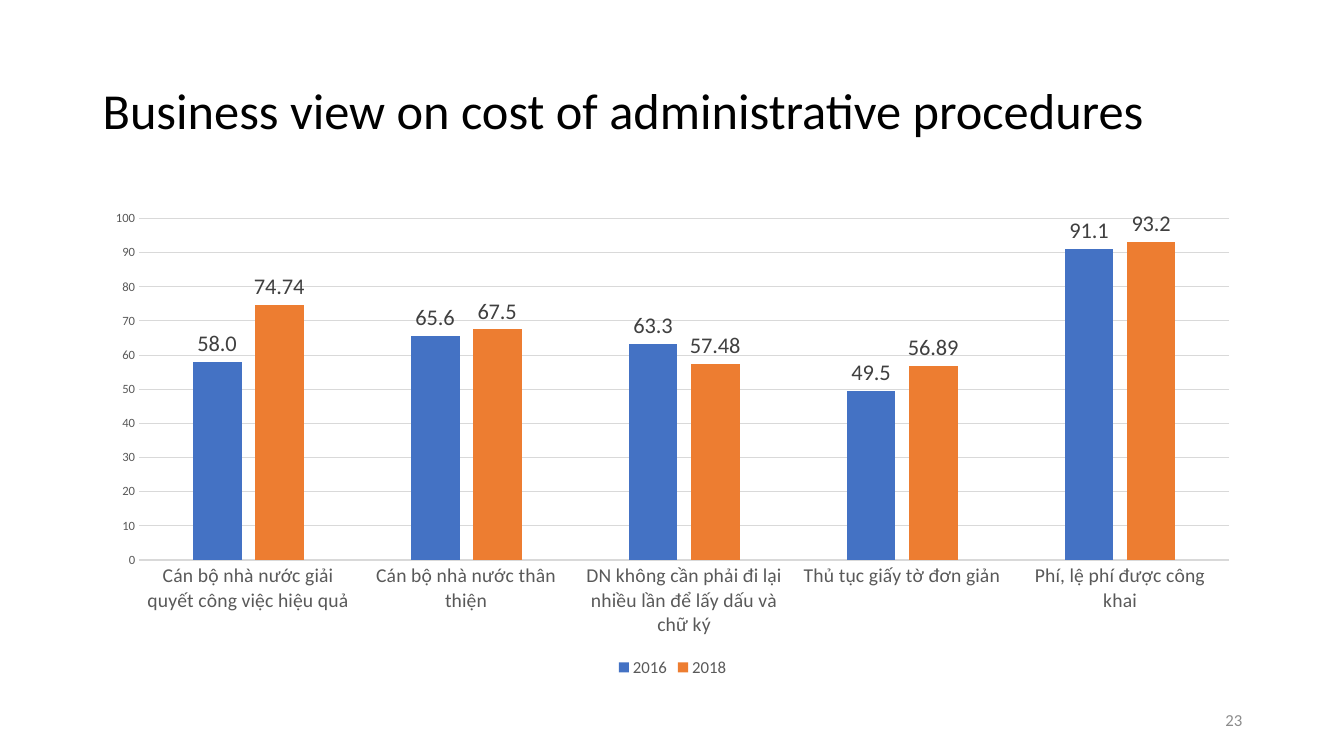
import pptx
import pptx.chart.data
import pptx.dml.color
import pptx.enum.chart
import pptx.enum.text
import pptx.util

Inches = pptx.util.Inches
RGBColor = pptx.dml.color.RGBColor
Align = pptx.enum.text.PP_ALIGN

# Content
TITLE = "Business view on cost of administrative procedures"
PAGE_NUMBER = "23"
CATEGORIES = [
    "Cán bộ nhà nước giải quyết công việc hiệu quả",
    "Cán bộ nhà nước thân thiện",
    "DN không cần phải đi lại nhiều lần để lấy dấu và chữ ký",
    "Thủ tục giấy tờ đơn giản",
    "Phí, lệ phí được công khai",
]
BLUE = RGBColor(0x44, 0x72, 0xC4)
ORANGE = RGBColor(0xED, 0x7D, 0x31)
BLACK = RGBColor(0x00, 0x00, 0x00)
LABEL_GRAY = RGBColor(0x40, 0x40, 0x40)
AXIS_GRAY = RGBColor(0x59, 0x59, 0x59)
NUMBER_GRAY = RGBColor(0x8C, 0x8C, 0x8C)
LINE_GRAY = RGBColor(0xD9, 0xD9, 0xD9)
# name, values, colour, label format
SERIES = [
    ("2016", (58.0, 65.6, 63.3, 49.5, 91.1), BLUE, "0.0"),
    ("2018", (74.74, 67.5, 57.48, 56.89, 93.2), ORANGE, "General"),
]
LEFT, WIDTH = 0.92, 11.5


def style_font(font, size, color):
    font.name = "Calibri"
    font.size = pptx.util.Pt(size)
    font.color.rgb = color


def style_line(line):
    line.color.rgb = LINE_GRAY
    line.width = pptx.util.Pt(0.75)


def add_text(page, text, area, size, color, align):
    box = page.shapes.add_textbox(*map(Inches, area))
    frame = box.text_frame
    frame.word_wrap = True
    frame.vertical_anchor = pptx.enum.text.MSO_ANCHOR.MIDDLE
    para = frame.paragraphs[0]
    para.text = text
    para.alignment = align
    para.line_spacing = 0.9
    style_font(para.font, size, color)


def add_column_chart(page):
    data = pptx.chart.data.CategoryChartData()
    data.categories = CATEGORIES
    for name, values, _, number_format in SERIES:
        data.add_series(name, values, number_format)
    chart = page.shapes.add_chart(
        pptx.enum.chart.XL_CHART_TYPE.COLUMN_CLUSTERED,
        *map(Inches, (LEFT, 2, WIDTH, 4.76)), data).chart
    style_font(chart.font, 10, BLACK)
    chart.has_title = False

    # Legend
    chart.has_legend = True
    chart.legend.position = pptx.enum.chart.XL_LEGEND_POSITION.BOTTOM
    chart.legend.include_in_layout = False
    style_font(chart.legend.font, 12, AXIS_GRAY)

    # Axes
    for axis, size in ((chart.category_axis, 14), (chart.value_axis, 9)):
        axis.major_tick_mark = pptx.enum.chart.XL_TICK_MARK.NONE
        style_font(axis.tick_labels.font, size, AXIS_GRAY)
    style_line(chart.category_axis.format.line)
    value_axis = chart.value_axis
    value_axis.minimum_scale, value_axis.maximum_scale = 0, 100
    value_axis.major_unit = 10
    value_axis.format.line.fill.background()
    style_line(value_axis.major_gridlines.format.line)
    value_axis.tick_labels.number_format = "0"
    value_axis.tick_labels.number_format_is_linked = False

    # Columns and their labels
    plot = chart.plots[0]
    plot.gap_width, plot.overlap = 219, -27
    plot.vary_by_categories = False
    for series, (_, _, color, number_format) in zip(plot.series, SERIES):
        series.format.fill.solid()
        series.format.fill.fore_color.rgb = color
        labels = series.data_labels
        labels.show_value = True
        labels.number_format = number_format
        labels.number_format_is_linked = False
        labels.position = pptx.enum.chart.XL_LABEL_POSITION.OUTSIDE_END
        style_font(labels.font, 16, LABEL_GRAY)


def main():
    deck = pptx.Presentation()
    deck.slide_width, deck.slide_height = Inches(13.33), Inches(7.5)
    page = deck.slides.add_slide(deck.slide_layouts[6])
    add_text(page, TITLE, (LEFT, 0.4, WIDTH, 1.45), 36, BLACK, Align.LEFT)
    add_text(page, PAGE_NUMBER, (9.42, 6.95, 3, 0.4), 12, NUMBER_GRAY, Align.RIGHT)
    add_column_chart(page)
    deck.save("out.pptx")


if __name__ == "__main__":
    main()
